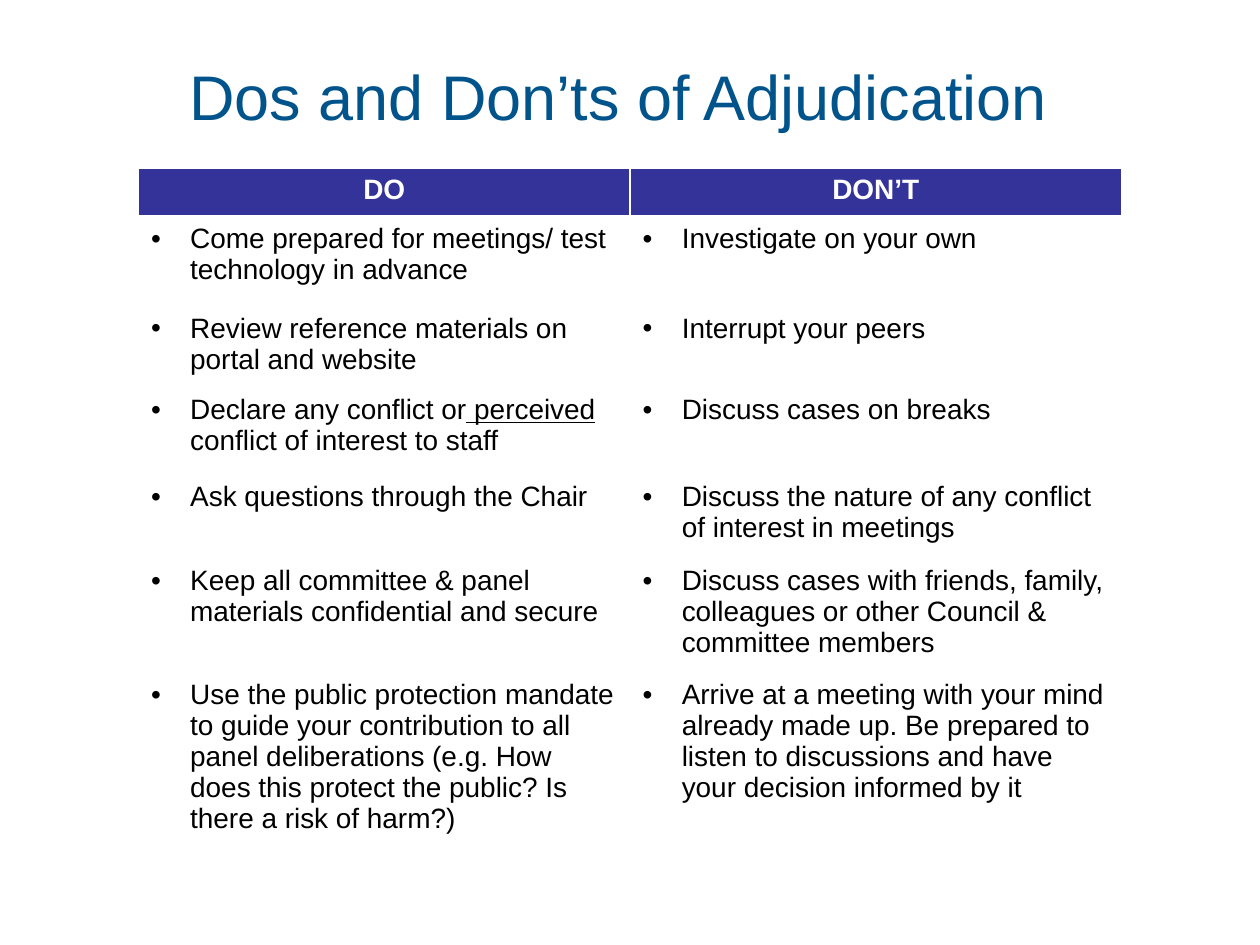
from dataclasses import dataclass

from lxml import etree
from pptx import Presentation
from pptx import util as u
from pptx.dml.color import RGBColor
from pptx.enum import text
from pptx.oxml import ns


@dataclass(frozen=True)
class Theme:
    font: str = "Arial"
    title_size: int = 36
    table_size: int = 16
    title: str = "00548B"
    header_fill: str = "333399"
    header_text: str = "FFFFFF"
    body_text: str = "000000"
    border: str = "FFFFFF"


@dataclass(frozen=True)
class Advice:
    """One table row; underscores enclose underlined words."""
    do: str
    dont: str
    height: float  # cm


THEME = Theme()
HEADER = Advice("DO", "DON’T", 0.99)
ADVICE = [
    Advice("Come prepared for meetings/ test technology in advance",
           "Investigate on your own", 1.8),
    Advice("Review reference materials on portal and website",
           "Interrupt your peers", 1.64),
    Advice("Declare any conflict or_ perceived_ conflict of interest to staff",
           "Discuss cases on breaks", 1.75),
    Advice("Ask questions through the Chair",
           "Discuss the nature of any conflict of interest in meetings", 1.7),
    Advice("Keep all committee & panel materials confidential and secure",
           "Discuss cases with friends, family, colleagues or other Council & "
           "committee members", 2.29),
    Advice("Use the public protection mandate to guide your contribution to all "
           "panel deliberations (e.g. How does this protect the public? "
           "Is there a risk of harm?)",
           "Arrive at a meeting with your mind already made up. Be prepared to "
           "listen to discussions and have your decision informed by it", 3.81),
]
COLUMN_WIDTH = u.Cm(9.91)
BULLET_INDENT = u.Cm(0.79)


def set_font(paragraph, size: int, color: str, bold: bool = False) -> None:
    font = paragraph.font
    font.name, font.size, font.bold = THEME.font, u.Pt(size), bold
    font.color.rgb = RGBColor.from_string(color)


def add_borders(cell, bottom_width: int) -> None:
    properties = cell._tc.get_or_add_tcPr()
    for side, width in (("L", 1), ("R", 1), ("T", 1), ("B", bottom_width)):
        line = etree.SubElement(properties, ns.qn(f"a:ln{side}"), w=str(u.Pt(width)))
        fill = etree.SubElement(line, ns.qn("a:solidFill"))
        etree.SubElement(fill, ns.qn("a:srgbClr"), val=THEME.border)


def add_bullet(paragraph) -> None:
    properties = paragraph._p.get_or_add_pPr()
    properties.set("marL", str(BULLET_INDENT))
    properties.set("indent", str(-BULLET_INDENT))
    etree.SubElement(properties, ns.qn("a:buFont"), typeface=THEME.font)
    etree.SubElement(properties, ns.qn("a:buChar"), char="•")


def fill_header(cell, label: str) -> None:
    add_borders(cell, bottom_width=3)
    cell.fill.solid()
    cell.fill.fore_color.rgb = RGBColor.from_string(THEME.header_fill)
    paragraph = cell.text_frame.paragraphs[0]
    paragraph.text = label
    paragraph.alignment = text.PP_ALIGN.CENTER
    set_font(paragraph, THEME.table_size, THEME.header_text, bold=True)


def fill_advice(cell, wording: str) -> None:
    add_borders(cell, bottom_width=1)
    cell.fill.background()
    paragraph = cell.text_frame.paragraphs[0]
    add_bullet(paragraph)
    set_font(paragraph, THEME.table_size, THEME.body_text)
    for index, part in enumerate(wording.split("_")):
        run = paragraph.add_run()
        run.text = part
        if index % 2:
            run.font.underline = True


def add_title(slide, wording: str) -> None:
    title = slide.shapes.title
    title.left, title.top = u.Cm(1.57), u.Cm(0.76)
    title.width, title.height = u.Cm(21.79), u.Cm(2.34)
    title.text_frame.vertical_anchor = text.MSO_ANCHOR.MIDDLE
    paragraph = title.text_frame.paragraphs[0]
    paragraph.text = wording
    paragraph.alignment = text.PP_ALIGN.CENTER
    set_font(paragraph, THEME.title_size, THEME.title)


def add_advice_table(slide) -> None:
    rows = [HEADER, *ADVICE]
    height = u.Cm(sum(row.height for row in rows))
    table = slide.shapes.add_table(len(rows), 2, u.Cm(2.79), u.Cm(3.39),
                                   2 * COLUMN_WIDTH, height).table
    table.horz_banding = False
    for column in table.columns:
        column.width = COLUMN_WIDTH
    for index, row in enumerate(rows):
        table.rows[index].height = u.Cm(row.height)
        fill_cell = fill_header if row is HEADER else fill_advice
        fill_cell(table.cell(index, 0), row.do)
        fill_cell(table.cell(index, 1), row.dont)


def main() -> None:
    presentation = Presentation()
    presentation.slide_width, presentation.slide_height = u.Cm(25.4), u.Cm(19.05)
    # Title Only layout
    slide = presentation.slides.add_slide(presentation.slide_layouts[5])
    add_title(slide, "Dos and Don’ts of Adjudication")
    add_advice_table(slide)
    presentation.save("out.pptx")


if __name__ == "__main__":
    main()
